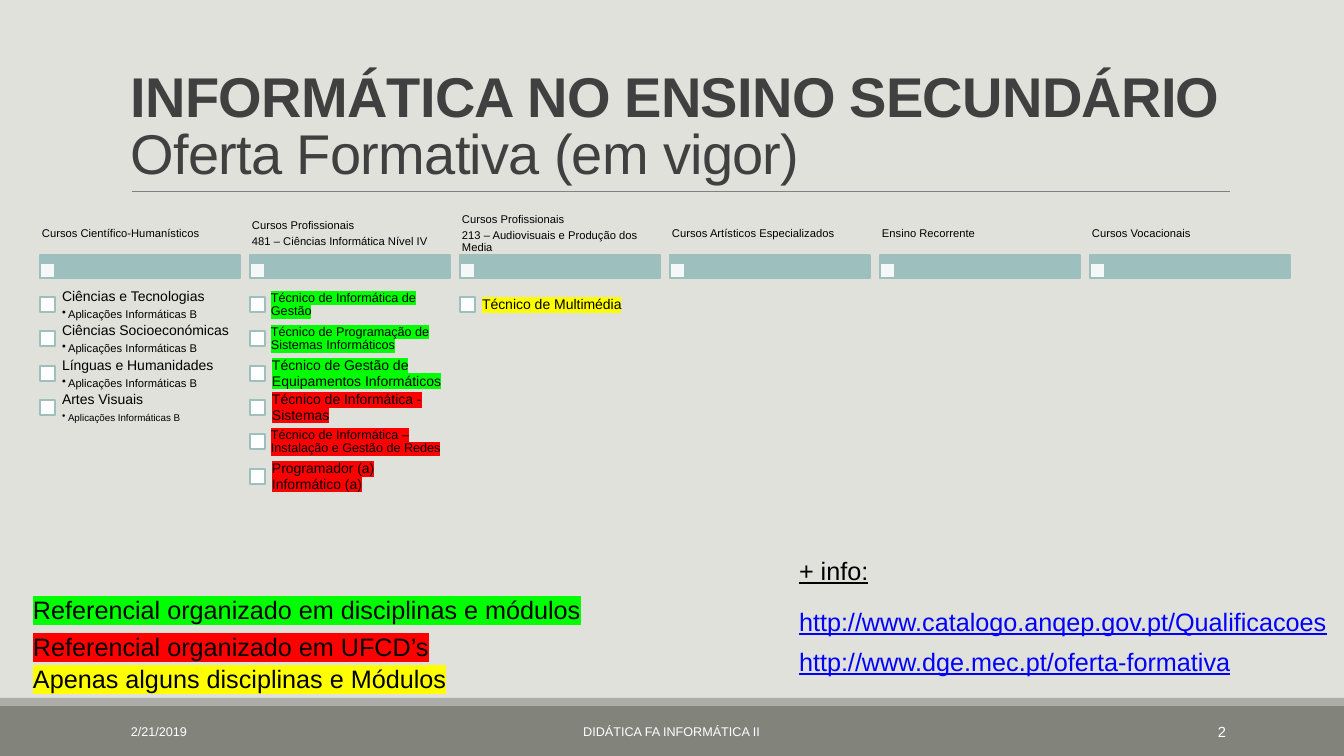
import pptx
import pptx.dml.color
import pptx.enum.shapes
import pptx.enum.text
import pptx.oxml
import pptx.oxml.ns
import pptx.util

RGBColor = pptx.dml.color.RGBColor
Anchor = pptx.enum.text.MSO_ANCHOR
Align = pptx.enum.text.PP_ALIGN
qn = pptx.oxml.ns.qn

BACKGROUND = RGBColor(0xE1, 0xE1, 0xDB)
FOOTER = RGBColor(0x82, 0x84, 0x7C)
FOOTER_EDGE = RGBColor(0xAC, 0xAD, 0xA8)
RULE = RGBColor(0x80, 0x80, 0x80)
TITLE = RGBColor(0x40, 0x40, 0x40)
TEAL = RGBColor(0x9D, 0xBF, 0xBE)
WHITE = RGBColor(0xFF, 0xFF, 0xFF)
BLACK = RGBColor(0x00, 0x00, 0x00)
LINK = RGBColor(0x00, 0x00, 0xFF)
GREEN = RGBColor(0x00, 0xFF, 0x00)
RED = RGBColor(0xFF, 0x00, 0x00)
YELLOW = RGBColor(0xFF, 0xFF, 0x00)

FONT = "Arial"
EMU_PER_PX = 914400 / 100.8
COLUMN_LEFT, COLUMN_PITCH, COLUMN_WIDTH = 40, 210, 200
ROW_TOP, ROW_BOTTOM, ROW_COUNT = 288, 494, 6
MARK = 15

APPLICATIONS = "Aplicações Informáticas B"
COLUMNS = [
    (["Cursos Científico-Humanísticos"], [
        ("Ciências e Tecnologias", 10, None, 8),
        ("Ciências Socioeconómicas", 10, None, 8),
        ("Línguas e Humanidades", 10, None, 8),
        ("Artes Visuais", 10, None, 7),
    ]),
    (["Cursos Profissionais", "481 – Ciências Informática Nível IV"], [
        ("Técnico de Informática de Gestão", 9, GREEN, None),
        ("Técnico de Programação de Sistemas Informáticos", 9, GREEN, None),
        ("Técnico de Gestão de Equipamentos Informáticos", 10, GREEN, None),
        ("Técnico de Informática - Sistemas", 10, RED, None),
        ("Técnico de Informática – Instalação e Gestão de Redes", 9, RED, None),
        ("Programador (a) Informático (a)", 10, RED, None),
    ]),
    (["Cursos Profissionais", "213 – Audiovisuais e Produção dos Media"], [
        ("Técnico de Multimédia", 10, YELLOW, None),
    ]),
    (["Cursos Artísticos Especializados"], []),
    (["Ensino Recorrente"], []),
    (["Cursos Vocacionais"], []),
]
FOOTER_TEXTS = [
    ("2/21/2019", 121, 272, 9, Align.LEFT),
    ("DIDÁTICA FA INFORMÁTICA II", 406, 531, 9, Align.CENTER),
    ("2", 1092, 144, 10.5, Align.RIGHT),
]
LEGEND = [
    ("Referencial organizado em disciplinas e módulos", 589, GREEN),
    ("Referencial organizado em UFCD’s", 626, RED),
    ("Apenas alguns disciplinas e Módulos", 658, YELLOW),
]
INFORMATION = [
    ("+ info:", 550, BLACK),
    ("http://www.catalogo.anqep.gov.pt/Qualificacoes", 601, LINK),
    ("http://www.dge.mec.pt/oferta-formativa", 641, LINK),
]


def px(length):
    return pptx.util.Emu(round(length * EMU_PER_PX))


def write(paragraph, text, size, color=BLACK, bold=False, underline=False,
          highlight=None, tracking=None, align=Align.LEFT, line=None,
          after=0, bullet=False):
    paragraph.alignment = align
    paragraph.space_after = pptx.util.Pt(after)
    if line:
        paragraph.line_spacing = line
    if bullet:
        properties = paragraph._p.get_or_add_pPr()
        properties.set("marL", str(px(6)))
        properties.set("indent", str(-px(6)))
        mark = pptx.oxml.parse_xml(f'<a:buChar {pptx.oxml.ns.nsdecls("a")} char="•"/>')
        properties.append(mark)
    run = paragraph.add_run()
    run.text = text
    run.font.name = FONT
    run.font.size = pptx.util.Pt(size)
    run.font.bold = bold
    run.font.underline = underline
    run.font.color.rgb = color
    if tracking:
        run._r.rPr.set("spc", str(tracking))
    if highlight is not None:
        marker = pptx.oxml.parse_xml(
            f'<a:highlight {pptx.oxml.ns.nsdecls("a")}><a:srgbClr val="{highlight}"/></a:highlight>')
        run._r.rPr.find(qn("a:solidFill")).addnext(marker)


class SlideBuilder:
    def __init__(self, presentation):
        self.slide = presentation.slides.add_slide(presentation.slide_layouts[6])
        self.slide.background.fill.solid()
        self.slide.background.fill.fore_color.rgb = BACKGROUND

    def box(self, left, top, width, height, fill, line=None, opacity=None):
        shape = self.slide.shapes.add_shape(
            pptx.enum.shapes.MSO_SHAPE.RECTANGLE, px(left), px(top), px(width), px(height))
        shape.shadow.inherit = False
        shape.fill.solid()
        shape.fill.fore_color.rgb = fill
        if line is None:
            shape.line.fill.background()
        else:
            shape.line.color.rgb = line
            shape.line.width = pptx.util.Pt(1.25)
        if opacity:
            alpha = pptx.oxml.parse_xml(
                f'<a:alpha {pptx.oxml.ns.nsdecls("a")} val="{opacity * 1000}"/>')
            shape._element.spPr.find(qn("a:solidFill"))[0].append(alpha)

    def rule(self, left, top, right, color):
        connector = self.slide.shapes.add_connector(
            pptx.enum.shapes.MSO_CONNECTOR.STRAIGHT, px(left), px(top), px(right), px(top))
        connector.line.color.rgb = color
        connector.line.width = pptx.util.Pt(0.5)
        connector._element.spPr.append(
            pptx.oxml.parse_xml(f'<a:effectLst {pptx.oxml.ns.nsdecls("a")}/>'))

    def text(self, left, top, width, height, paragraphs, anchor=Anchor.TOP, inset=(10, 5)):
        frame = self.slide.shapes.add_textbox(
            px(left), px(top), px(width), px(height)).text_frame
        frame.word_wrap = True
        frame.vertical_anchor = anchor
        frame.margin_left = frame.margin_right = px(inset[0])
        frame.margin_top = frame.margin_bottom = px(inset[1])
        for index, (content, style) in enumerate(paragraphs):
            paragraph = frame.add_paragraph() if index else frame.paragraphs[0]
            write(paragraph, content, **style)

    def column(self, left, headings, courses):
        self.box(left, 255, COLUMN_WIDTH, 23, TEAL, TEAL)
        self.box(left, 263, MARK, MARK, WHITE, TEAL, opacity=90)
        heading_style = dict(size=8, line=0.9, after=2.8)
        self.text(left, 213, COLUMN_WIDTH, 42,
                  [(heading, heading_style) for heading in headings], Anchor.MIDDLE, (2, 1))
        for row, course in enumerate(courses):
            top = ROW_TOP + round((ROW_BOTTOM - ROW_TOP) * row / ROW_COUNT)
            self.course(left, top, *course)

    def course(self, left, top, name, size, highlight, detail_size):
        self.box(left, top + 9, MARK, MARK, WHITE, TEAL)
        paragraphs = [(name, dict(size=size, highlight=highlight, line=0.9, after=size * 0.35))]
        if detail_size:
            paragraphs.append((APPLICATIONS, dict(
                size=detail_size, line=0.9, after=detail_size * 0.15, bullet=True)))
        inset = 8 if size == 10 else 7
        self.text(left + 14, top, COLUMN_WIDTH - 14, 34, paragraphs, Anchor.MIDDLE, (inset, inset))


def main():
    presentation = pptx.Presentation()
    presentation.slide_width = px(1344)
    presentation.slide_height = px(756)
    builder = SlideBuilder(presentation)

    builder.box(0, 706, 1344, 50, FOOTER)
    builder.box(0, 698, 1344, 8, FOOTER_EDGE)
    builder.rule(132, 191, 1230, RULE)
    title_style = dict(size=40, color=TITLE, tracking=-50, line=0.85)
    builder.text(121, 31, 1115, 160, [
        ("INFORMÁTICA NO ENSINO SECUNDÁRIO", dict(title_style, bold=True)),
        ("Oferta Formativa (em vigor)", title_style),
    ], Anchor.BOTTOM)
    for content, left, width, size, align in FOOTER_TEXTS:
        builder.text(left, 712, width, 40,
                     [(content, dict(size=size, color=WHITE, align=align))], Anchor.MIDDLE)
    for index, (headings, courses) in enumerate(COLUMNS):
        builder.column(COLUMN_LEFT + COLUMN_PITCH * index, headings, courses)
    for content, top, color in LEGEND:
        builder.text(23, top, 621, 40, [(content, dict(size=18, highlight=color))])
    for content, top, color in INFORMATION:
        builder.text(789, top, 555, 40, [(content, dict(size=18, color=color, underline=True))])
    presentation.save("out.pptx")


if __name__ == "__main__":
    main()
